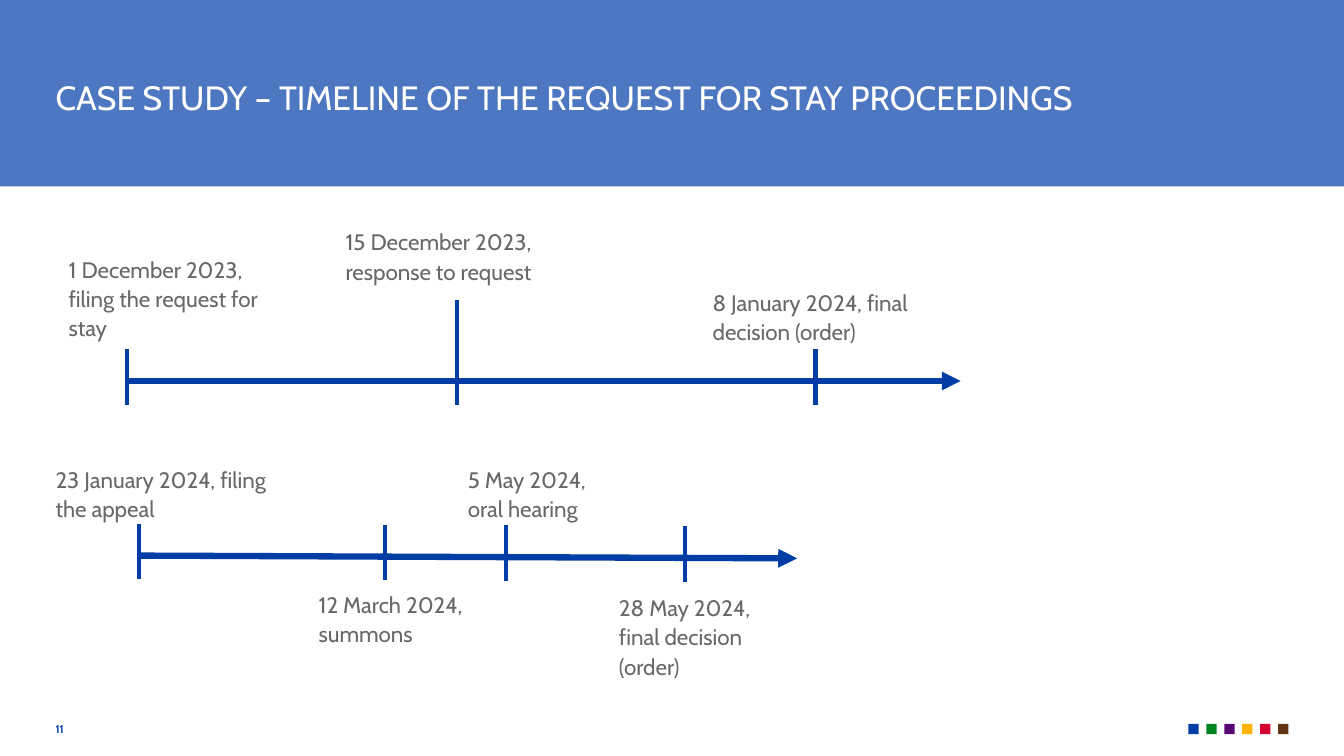
from lxml import etree
from pptx import Presentation
from pptx.dml.color import RGBColor
from pptx.enum.shapes import MSO_CONNECTOR, MSO_SHAPE
from pptx.enum.text import MSO_ANCHOR, MSO_AUTO_SIZE, PP_ALIGN
from pptx.oxml.ns import qn
from pptx.util import Cm, Pt

STRAIGHT = MSO_CONNECTOR.STRAIGHT
RECTANGLE = MSO_SHAPE.RECTANGLE
TOP, MIDDLE = MSO_ANCHOR.TOP, MSO_ANCHOR.MIDDLE
NO_FIT = MSO_AUTO_SIZE.NONE
LEFT = PP_ALIGN.LEFT

FONT = "Cabin"
COLORS = {
    "band": "4D77C0", "white": "FFFFFF", "text": "686869", "blue": "003DA5",
    "green": "008522", "purple": "590776", "yellow": "FFB500",
    "red": "D50032", "brown": "623412",
}
SQUARES = ("blue", "green", "purple", "yellow", "red", "brown")
TICK_ABOVE, TICK_BELOW = 0.8, 0.6
LABEL_HEIGHT = 1.4

# Each event: distance along the axis, label text, label offset from the
# point on the axis (right, down), label width, tick height above the axis
REQUEST_EVENTS = [
    (0, "1 December 2023, filing the request for stay", (-1.47, -3.22), 5.05, TICK_ABOVE),
    (8.31, "15 December 2023, response to request", (-2.8, -3.91), 6.63, 2.03),
    (17.35, "8 January 2024, final decision (order)", (-2.59, -2.39), 6.63, TICK_ABOVE),
]
APPEAL_EVENTS = [
    (0, "23 January 2024, filing the appeal", (-2.11, -2.32), 5.38, TICK_ABOVE),
    (6.19, "12 March 2024, summons", (-1.67, 0.8), 3.78, TICK_ABOVE),
    (9.24, "5 May 2024, oral hearing", (-0.96, -2.36), 3.73, TICK_ABOVE),
    (13.76, "28 May 2024, final decision (order)", (-1.67, 0.85), 3.78, TICK_ABOVE),
]


def color(name):
    return RGBColor.from_string(COLORS[name])


def write(shape, text, size=16, ink="text", bold=False, anchor=TOP, line_spacing=None):
    frame = shape.text_frame
    frame.auto_size = NO_FIT
    frame.word_wrap = True
    frame.vertical_anchor = anchor
    frame.margin_left = frame.margin_right = frame.margin_top = frame.margin_bottom = 0
    para = frame.paragraphs[0]
    para.alignment = LEFT
    if line_spacing:
        para.line_spacing = Pt(line_spacing)
    span = para.add_run()
    span.text = text
    span.font.name = FONT
    span.font.size = Pt(size)
    span.font.bold = bold
    span.font.color.rgb = color(ink)


def add_text(page, text, left, top, width, height, **style):
    box = page.shapes.add_textbox(Cm(left), Cm(top), Cm(width), Cm(height))
    write(box, text, **style)


def add_rectangle(page, left, top, width, height, fill):
    shape = page.shapes.add_shape(RECTANGLE, Cm(left), Cm(top), Cm(width), Cm(height))
    shape.shadow.inherit = False
    shape.fill.solid()
    shape.fill.fore_color.rgb = color(fill)
    shape.line.fill.background()


def add_line(page, x1, y1, x2, y2, weight, arrow=False):
    line = page.shapes.add_connector(STRAIGHT, Cm(x1), Cm(y1), Cm(x2), Cm(y2))
    line.line.color.rgb = color("blue")
    line.line.width = Pt(weight)
    properties = line.element.spPr
    if arrow:
        outline = properties.find(qn("a:ln"))
        etree.SubElement(outline, qn("a:tailEnd"), type="triangle")
    etree.SubElement(properties, qn("a:effectLst"))


def add_header(page, left, top, width, height, text):
    add_rectangle(page, left, top, width, height, "band")
    title = page.shapes.title
    title.left, title.top = Cm(left + 1.4), Cm(top + 1.93)
    title.width, title.height = Cm(width - 2.82), Cm(1.02)
    write(title, text, size=24, ink="white")
    page.shapes.element.append(title.element)  # bring the title above the band


def add_timeline(page, left, top, width, drop, events):
    """Draw an arrow falling by drop over its width, with ticks and labels."""
    add_line(page, left, top, left + width, top + drop, 4.5, arrow=True)
    for distance, text, (right, down), label_width, above in events:
        x, y = left + distance, top + drop * distance / width
        add_line(page, x, y - above, x, y + TICK_BELOW, 3)
        add_text(page, text, x + right, y + down, label_width, LABEL_HEIGHT,
                 line_spacing=21)


def add_footer(page, left, top, width, number):
    add_text(page, number, left, top, 0.94, 0.33, size=8, ink="blue", bold=True,
             anchor=MIDDLE)
    side, pitch = 0.26, 0.452
    first = left + width - side - pitch * (len(SQUARES) - 1)
    for index, name in enumerate(SQUARES):
        add_rectangle(page, first + index * pitch, top + 0.04, side, side, name)


def main():
    deck = Presentation()
    deck.slide_width, deck.slide_height = Cm(33.87), Cm(19.05)
    page = deck.slides.add_slide(deck.slide_layouts[5])
    add_header(page, 0, 0, 33.87, 4.7,
               "CASE STUDY – TIMELINE OF THE REQUEST FOR STAY PROCEEDINGS")
    add_timeline(page, 3.2, 9.6, 21.01, 0, REQUEST_EVENTS)
    add_timeline(page, 3.51, 14, 16.58, 0.07, APPEAL_EVENTS)
    add_footer(page, 1.4, 18.2, 31.07, "11")
    deck.save("out.pptx")


if __name__ == "__main__":
    main()
